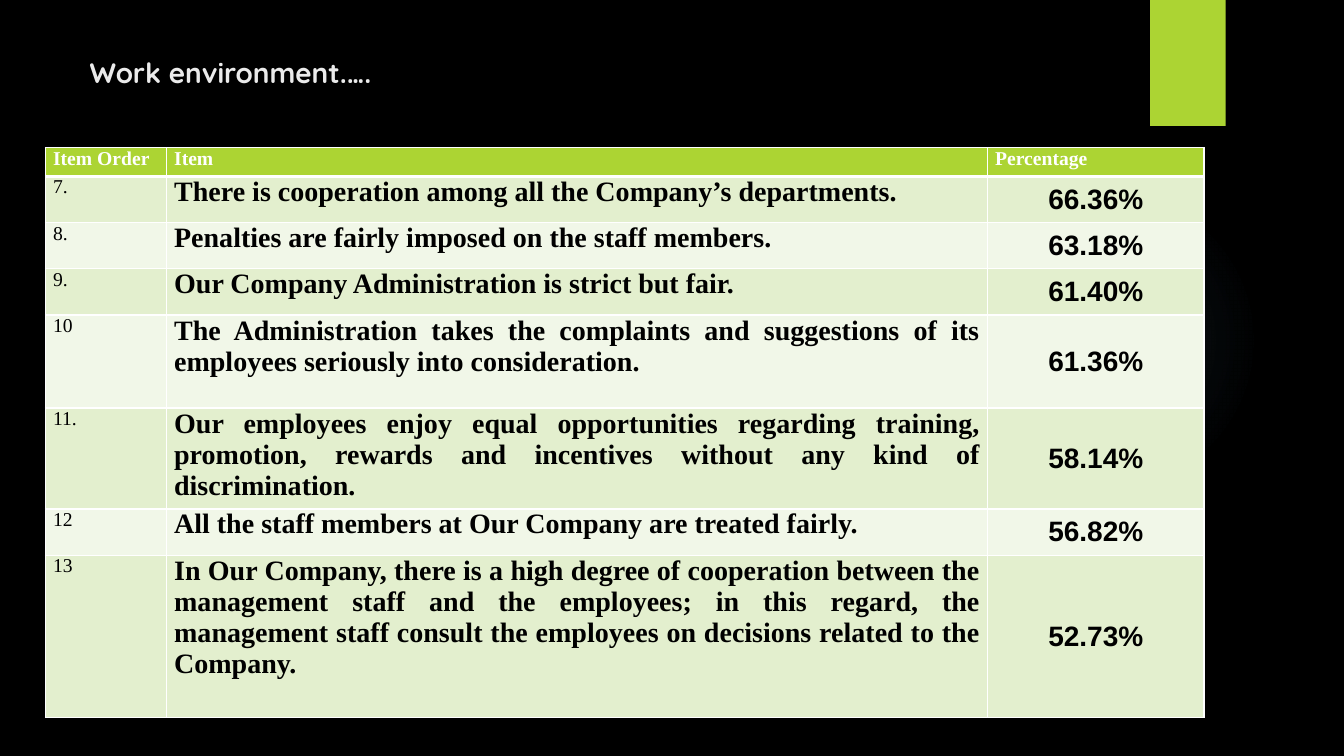
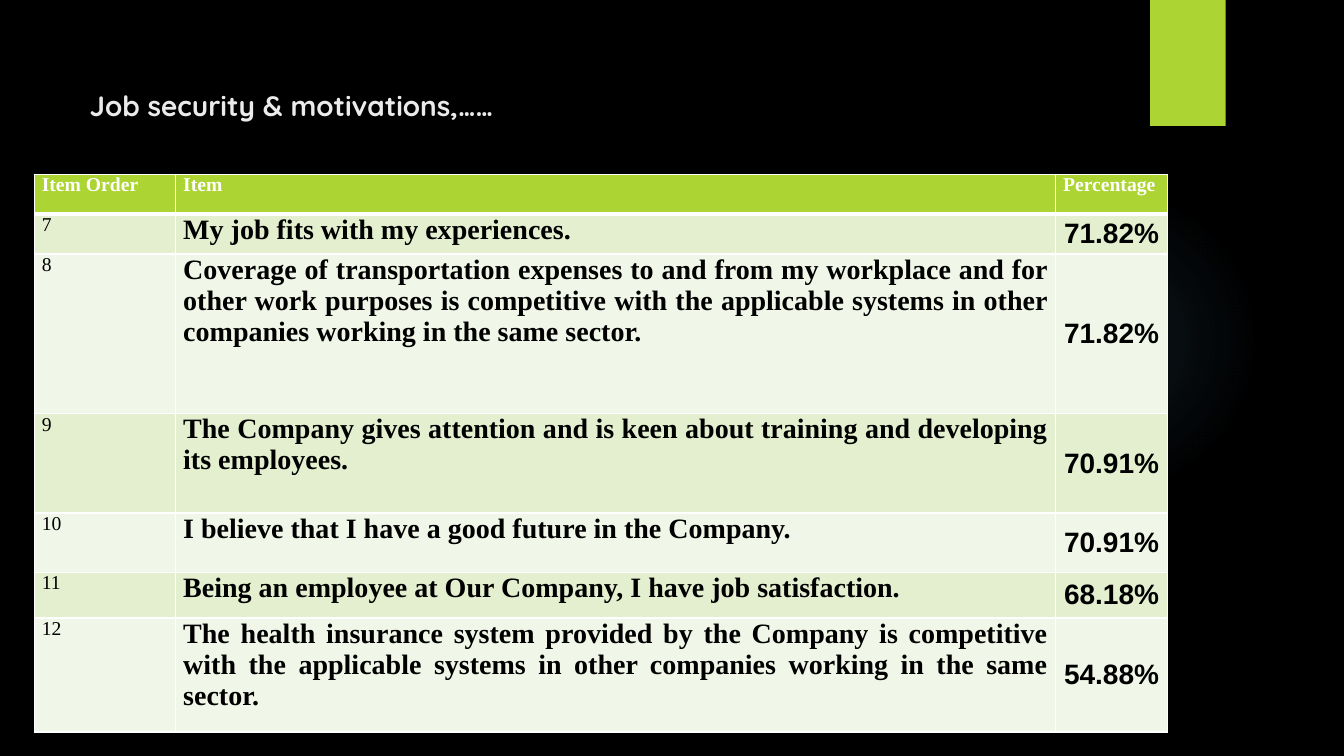
from lxml import etree
from pptx import Presentation
from pptx.dml.color import RGBColor
from pptx.enum.shapes import MSO_SHAPE
from pptx.enum.text import MSO_ANCHOR, PP_ALIGN
from pptx.oxml import parse_xml
from pptx.oxml.ns import qn
from pptx.util import Pt

OVAL, RECT = MSO_SHAPE.OVAL, MSO_SHAPE.RECTANGLE
MIDDLE, TOP = MSO_ANCHOR.MIDDLE, MSO_ANCHOR.TOP
CENTER, JUSTIFY = PP_ALIGN.CENTER, PP_ALIGN.JUSTIFY

COLORS = {
    "back": "000000", "text": "000000", "title": "EBEBEB", "white": "FFFFFF",
    "lime": "ACD433", "odd": "E3EFCE", "even": "F1F7E8", "glow": "7AC4F0",
}
NS = 'xmlns:a="http://schemas.openxmlformats.org/drawingml/2006/main"'
SERIF, SANS, HEAD = "Times New Roman", "Calibri", "Quicksand"
HEADERS = ("Item Order", "Item", "Percentage")
GLOW_STOPS = ((0, 7), (36, 6), (69, 0))

WORK = [
    ("7.", "There is cooperation among all the Company’s departments.", "66.36%"),
    ("8.", "Penalties are fairly imposed on the staff members.", "63.18%"),
    ("9.", "Our Company Administration is strict but fair.", "61.40%"),
    ("10", "The Administration takes the complaints and suggestions of its "
           "employees seriously into consideration.", "61.36%"),
    ("11.", "Our employees enjoy equal opportunities regarding training, "
            "promotion, rewards and incentives without any kind of "
            "discrimination.", "58.14%"),
    ("12", "All the staff members at Our Company are treated fairly.", "56.82%"),
    ("13", "In Our Company, there is a high degree of cooperation between the "
           "management staff and the employees; in this regard, the management "
           "staff consult the employees on decisions related to the Company.",
     "52.73%"),
]
SECURITY = [
    ("7", "My job fits with my experiences.", "71.82%"),
    ("8", "Coverage of transportation expenses to and from my workplace and for "
          "other work purposes is competitive with the applicable systems in "
          "other companies working in the same sector.", "71.82%"),
    ("9", "The Company gives attention and is keen about training and "
          "developing its employees.", "70.91%"),
    ("10", "I believe that I have a good future in the Company.", "70.91%"),
    ("11", "Being an employee at Our Company, I have job satisfaction.", "68.18%"),
    ("12", "The health insurance system provided by the Company is competitive "
           "with the applicable systems in other companies working in the same "
           "sector.", "54.88%"),
]
SLIDES = [
    dict(title="Work environment.….", middle=51.5, rows=WORK, spot=(32.5, 105.5),
         widths=(86.5, 586.5, 154.5),
         heights=(20.5, 33, 33, 33, 66.5, 66.5, 33, 116)),
    dict(title="Job security & motivations,……", middle=75.5, rows=SECURITY,
         spot=(24.5, 124.5), widths=(101, 628.5, 80),
         heights=(28.5, 28.5, 114, 71, 42.5, 32.5, 81.5)),
]


def rgb(name):
    return RGBColor.from_string(COLORS[name])


def style(para, face, size, color, bold):
    font = para.runs[0].font
    font.name, font.size, font.bold = face, Pt(size), bold
    font.color.rgb = rgb(color)


def add_plain(slide, kind, box):
    shape = slide.shapes.add_shape(kind, *map(Pt, box))
    shape.shadow.inherit = False
    shape.line.fill.background()
    return shape


def add_decor(slide):
    """Faint round glow and the lime tab at the top edge."""
    glow = add_plain(slide, OVAL, (677.5, 132, 222, 222))
    stops = "".join(
        f'<a:gs pos="{pos * 1000}"><a:srgbClr val="{COLORS["glow"]}">'
        f'<a:alpha val="{alpha * 1000}"/></a:srgbClr></a:gs>'
        for pos, alpha in GLOW_STOPS)
    glow.element.spPr.find(qn("a:prstGeom")).addnext(parse_xml(
        f'<a:gradFill {NS}><a:gsLst>{stops}</a:gsLst><a:path path="circle">'
        '<a:fillToRect l="50000" t="50000" r="50000" b="50000"/>'
        '</a:path></a:gradFill>'))
    tab = add_plain(slide, RECT, (821.5, 0, 54, 90))
    tab.fill.solid()
    tab.fill.fore_color.rgb = rgb("lime")


def add_title(slide, text, middle):
    high = 36
    box = slide.shapes.add_textbox(Pt(57), Pt(middle - high / 2), Pt(735), Pt(high))
    frame = box.text_frame
    frame.word_wrap = True
    frame.vertical_anchor = MIDDLE
    frame.text = text
    style(frame.paragraphs[0], HEAD, 20, "title", True)


def set_edges(cell, top, bottom):
    props = cell._tc.get_or_add_tcPr()
    for side, width in zip("LRTB", (1, 1, top, bottom)):
        props.append(parse_xml(
            f'<a:ln{side} {NS} w="{Pt(width)}"><a:solidFill>'
            f'<a:srgbClr val="{COLORS["white"]}"/></a:solidFill></a:ln{side}>'))


def set_rtl(para):
    """Right-to-left figures, drawn in the complex-script font."""
    para._p.get_or_add_pPr().set("rtl", "1")
    props = para.runs[0].font._element
    etree.SubElement(props, qn("a:cs")).set("typeface", "Arial")


def fill_cell(cell, text, row, col):
    head, figure = row == 0, row > 0 and col == 2
    set_edges(cell, 3 if row == 1 else 1, 3 if head else 1)
    cell.fill.solid()
    cell.fill.fore_color.rgb = rgb("lime" if head else "odd" if row % 2 else "even")
    cell.margin_left = cell.margin_right = Pt(5.4)
    cell.margin_top = cell.margin_bottom = 0
    cell.vertical_anchor = MIDDLE if figure else TOP
    cell.text_frame.text = text
    para = cell.text_frame.paragraphs[0]
    para.alignment = CENTER if figure else JUSTIFY
    style(para, SANS if figure else SERIF, 14 if head or col == 0 else 20,
          "white" if head else "text", head or col > 0)
    if figure:
        set_rtl(para)
    else:
        para.space_after = Pt(6)


def add_grid(slide, rows, spot, widths, heights):
    data = [HEADERS, *rows]
    size = (sum(widths), sum(heights))
    grid = slide.shapes.add_table(
        len(data), len(widths), *map(Pt, spot + size)).table
    for column, width in zip(grid.columns, widths):
        column.width = Pt(width)
    for row, (texts, height) in enumerate(zip(data, heights)):
        grid.rows[row].height = Pt(height)
        for col, text in enumerate(texts):
            fill_cell(grid.cell(row, col), text, row, col)


def add_survey(deck, title, middle, **grid):
    slide = deck.slides.add_slide(deck.slide_layouts[6])
    add_decor(slide)
    add_title(slide, title, middle)
    add_grid(slide, **grid)


def main():
    deck = Presentation()
    deck.slide_width, deck.slide_height = Pt(960), Pt(540)
    back = deck.slide_master.background.fill
    back.solid()
    back.fore_color.rgb = rgb("back")
    for item in SLIDES:
        add_survey(deck, **item)
    deck.save("out.pptx")


if __name__ == "__main__":
    main()
